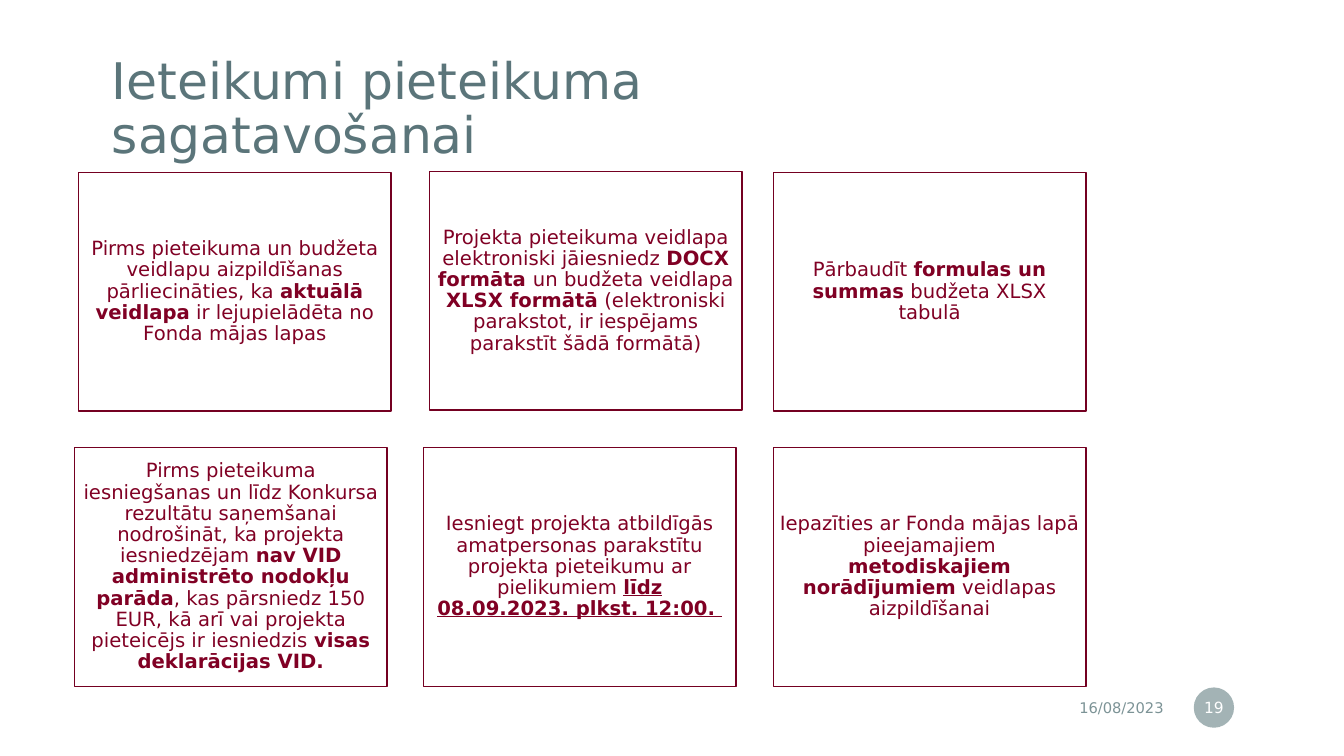
import dataclasses

import lxml.etree
import pptx
import pptx.dml.color
import pptx.enum.shapes
import pptx.enum.text
import pptx.oxml.ns
import pptx.util

Inches = pptx.util.Inches
ALIGN = pptx.enum.text.PP_ALIGN
SHAPES = pptx.enum.shapes.MSO_SHAPE


@dataclasses.dataclass(frozen=True)
class Theme:
    font: str = "DejaVu Sans"
    title_color: str = "5B757A"
    muted: str = "7C9396"
    card_text: str = "800024"
    card_line: str = "740021"
    white: str = "FFFFFF"
    title_size: float = 36
    card_size: float = 14
    date_size: float = 10.5
    number_size: float = 11


THEME = Theme()
BOLD = {"bold": True}
DEADLINE = {"bold": True, "underline": True}
CARD_SIZE = (3.1, 2.37)

# Each card: left and top, then its text runs with their formats
CARDS = [
    ((0.78, 1.71), [
        ("Pirms pieteikuma un budžeta veidlapu aizpildīšanas pārliecināties, ka ", {}),
        ("aktuālā veidlapa", BOLD),
        (" ir lejupielādēta no Fonda mājas lapas", {})]),
    ((4.26, 1.7), [
        ("Projekta pieteikuma veidlapa elektroniski jāiesniedz ", {}),
        ("DOCX formāta ", BOLD),
        ("un budžeta veidlapa ", {}),
        ("XLSX formātā", BOLD),
        (" (elektroniski parakstot, ir iespējams parakstīt šādā formātā)", {})]),
    ((7.67, 1.71), [
        ("Pārbaudīt ", {}),
        ("formulas un summas", BOLD),
        (" budžeta XLSX tabulā", {})]),
    ((0.74, 4.44), [
        ("Pirms pieteikuma iesniegšanas un līdz Konkursa rezultātu saņemšanai "
         "nodrošināt, ka projekta iesniedzējam ", {}),
        ("nav VID administrēto nodokļu parāda", BOLD),
        (", kas pārsniedz 150 EUR, kā arī vai projekta pieteicējs ir iesniedzis ", {}),
        ("visas deklarācijas VID.", BOLD)]),
    ((4.2, 4.44), [
        ("Iesniegt projekta atbildīgās amatpersonas parakstītu projekta "
         "pieteikumu ar pielikumiem ", {}),
        ("līdz 08.09.2023. plkst. 12:00. ", DEADLINE)]),
    ((7.67, 4.44), [
        ("Iepazīties ar Fonda mājas lapā pieejamajiem ", {}),
        ("metodiskajiem norādījumiem", BOLD),
        (" veidlapas aizpildīšanai", {})]),
]


def rgb(color):
    return pptx.dml.color.RGBColor.from_string(color)


def write(holder, runs, size, color, align, inset, spacing=1.0):
    """Fill a shape with one vertically centred paragraph; inset is (x, y)."""
    frame = holder.text_frame
    frame_format = {
        "word_wrap": True,
        "auto_size": pptx.enum.text.MSO_AUTO_SIZE.NONE,
        "vertical_anchor": pptx.enum.text.MSO_ANCHOR.MIDDLE,
        "margin_left": Inches(inset[0]), "margin_right": Inches(inset[0]),
        "margin_top": Inches(inset[1]), "margin_bottom": Inches(inset[1]),
    }
    for name, value in frame_format.items():
        setattr(frame, name, value)
    paragraph = frame.paragraphs[0]
    paragraph.alignment = align
    paragraph.line_spacing = spacing
    for text, extra in runs:
        run = paragraph.add_run()
        run.text = text
        font_format = {"name": THEME.font, "size": pptx.util.Pt(size), **extra}
        for name, value in font_format.items():
            setattr(run.font, name, value)
        run.font.color.rgb = rgb(color)


def add_title(slide, text):
    title = slide.shapes.title
    place = {"left": 0.91, "top": 0.48, "width": 8.73, "height": 1.23}
    for name, value in place.items():
        setattr(title, name, Inches(value))
    write(title, [(text, {})], THEME.title_size, THEME.title_color,
          ALIGN.LEFT, (0.2, 0.2), 0.9)


def add_filled(slide, kind, box, fill):
    shape = slide.shapes.add_shape(kind, *map(Inches, box))
    shape.shadow.inherit = False
    shape.fill.solid()
    shape.fill.fore_color.rgb = rgb(fill)
    return shape


def add_card(slide, corner, runs):
    card = add_filled(slide, SHAPES.RECTANGLE, corner + CARD_SIZE, THEME.white)
    card.line.color.rgb = rgb(THEME.card_line)
    card.line.width = pptx.util.Pt(1)
    write(card, runs, THEME.card_size, THEME.card_text,
          ALIGN.CENTER, (0.06, 0.06), 0.9)


def add_date(slide, text):
    date = slide.shapes.add_textbox(*map(Inches, (8.63, 6.84, 3.01, 0.35)))
    write(date, [(text, {})], THEME.date_size, THEME.muted,
          ALIGN.RIGHT, (0.1, 0.05))


def add_page_number(slide, text):
    badge = add_filled(slide, SHAPES.OVAL, (11.84, 6.82, 0.4, 0.4), THEME.muted)
    badge.line.fill.background()
    # Fill opacity of 70 %
    color = badge.fill._xPr.find(".//" + pptx.oxml.ns.qn("a:srgbClr"))
    lxml.etree.SubElement(color, pptx.oxml.ns.qn("a:alpha"), val="70000")
    write(badge, [(text, {})], THEME.number_size, THEME.white,
          ALIGN.CENTER, (0.02, 0.05))


def main():
    deck = pptx.Presentation()
    deck.slide_width, deck.slide_height = Inches(13.33), Inches(7.5)
    slide = deck.slides.add_slide(deck.slide_layouts.get_by_name("Title Only"))

    # Heading
    add_title(slide, "Ieteikumi pieteikuma sagatavošanai")

    # Footer
    add_date(slide, "16/08/2023")
    add_page_number(slide, "19")

    # Recommendation cards
    for corner, runs in CARDS:
        add_card(slide, corner, runs)

    deck.save("out.pptx")


if __name__ == "__main__":
    main()
